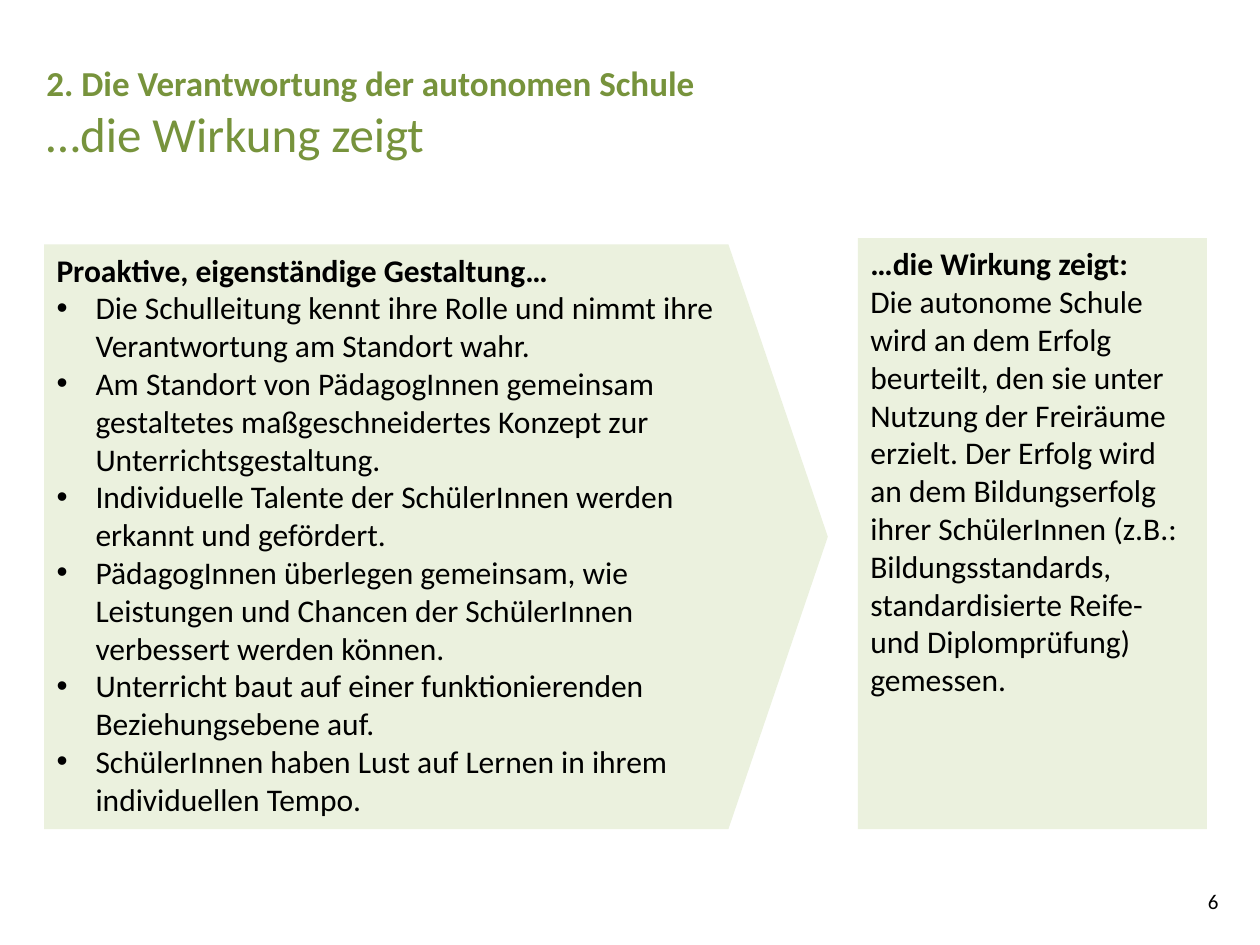
from lxml.etree import SubElement
from pptx import Presentation
from pptx.dml.color import RGBColor
from pptx.enum.shapes import MSO_SHAPE as Shape
from pptx.enum.text import MSO_ANCHOR as Anchor, PP_ALIGN as Align
from pptx.oxml.ns import qn
from pptx.util import Inches, Pt

FONT = "Calibri"
COLORS = {"title": "77933C", "panel": "EBF1DE", "text": "000000"}

POINTS = [
    "Die Schulleitung kennt ihre Rolle und nimmt ihre Verantwortung am Standort wahr.",
    "Am Standort von PädagogInnen gemeinsam gestaltetes maßgeschneidertes Konzept zur Unterrichtsgestaltung.",
    "Individuelle Talente der SchülerInnen werden erkannt und gefördert.",
    "PädagogInnen überlegen gemeinsam, wie Leistungen und Chancen der SchülerInnen verbessert werden können.",
    "Unterricht baut auf einer funktionierenden Beziehungsebene auf.",
    "SchülerInnen haben Lust auf Lernen in ihrem individuellen Tempo.",
]
EFFECT = (
    "Die autonome Schule wird an dem Erfolg beurteilt, den sie unter Nutzung der "
    "Freiräume erzielt. Der Erfolg wird an dem Bildungserfolg ihrer SchülerInnen "
    "(z.B.: Bildungsstandards, standardisierte Reife- und Diplomprüfung) gemessen."
)


def add_bullet(para):
    props = para._p.get_or_add_pPr()
    indent = Inches(0.31)
    props.set("marL", str(indent))
    props.set("indent", str(-indent))
    SubElement(props, qn("a:buFont")).set("typeface", "Arial")
    SubElement(props, qn("a:buChar")).set("char", "•")


def add_text(frame, text, size=18, color="text", bold=False,
             align=Align.LEFT, bullet=False):
    """Fill the first paragraph if it is empty, else append one."""
    para = frame.paragraphs[0]
    if para.runs:
        para = frame.add_paragraph()
    para.alignment = align
    if bullet:
        add_bullet(para)
    run = para.add_run()
    run.text = text
    font = run.font
    font.name, font.size, font.bold = FONT, Pt(size), bold
    font.color.rgb = RGBColor.from_string(COLORS[color])


def add_box(slide, left, top, width, height, anchor=Anchor.TOP):
    box = slide.shapes.add_textbox(*map(Inches, (left, top, width, height)))
    frame = box.text_frame
    frame.word_wrap = True
    frame.vertical_anchor = anchor
    return frame


def add_panel(slide, kind, left, top, width, height, head):
    """Add a filled panel with a bold heading."""
    panel = slide.shapes.add_shape(kind, *map(Inches, (left, top, width, height)))
    panel.shadow.inherit = False
    panel.fill.solid()
    panel.fill.fore_color.rgb = RGBColor.from_string(COLORS["panel"])
    panel.line.fill.background()
    frame = panel.text_frame
    frame.word_wrap = True
    frame.vertical_anchor = Anchor.TOP
    add_text(frame, head, bold=True)
    return panel


def main():
    deck = Presentation()
    deck.slide_width, deck.slide_height = Inches(10), Inches(7.5)
    slide = deck.slides.add_slide(deck.slide_layouts[6])

    # Title
    title = add_box(slide, 0.27, 0.44, 9, 1.09)
    add_text(title, "2. Die Verantwortung der autonomen Schule",
             size=20, color="title", bold=True)
    add_text(title, "…die Wirkung zeigt", size=28, color="title")

    # Slide number
    number = add_box(slide, 7.44, 6.95, 2.33, 0.4, anchor=Anchor.MIDDLE)
    add_text(number, "6", size=12, align=Align.RIGHT)

    # Effect
    effect = add_panel(slide, Shape.RECTANGLE, 6.81, 1.89, 2.77, 4.69,
                       "…die Wirkung zeigt:")
    add_text(effect.text_frame, EFFECT)

    # Arrow with the school's own actions
    arrow = add_panel(slide, Shape.PENTAGON, 0.35, 1.94, 6.22, 4.64,
                      "Proaktive, eigenständige Gestaltung…")
    arrow.adjustments[0] = 0.17
    for point in POINTS:
        add_text(arrow.text_frame, point, bullet=True)

    deck.save("out.pptx")


if __name__ == "__main__":
    main()
